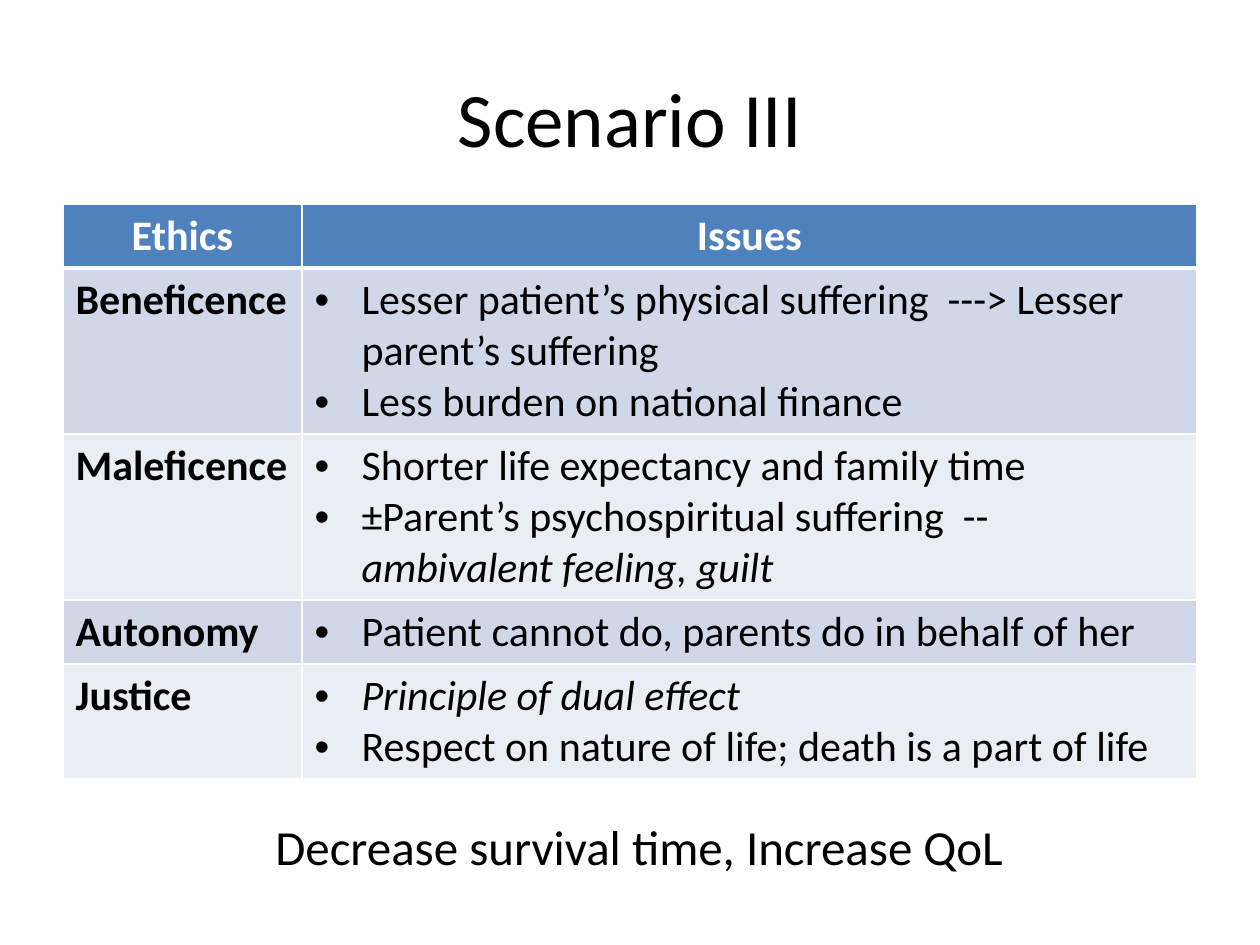
import pptx
import pptx.util
import pptx.dml.color
import pptx.enum.text
import pptx.oxml
import pptx.oxml.ns

EMU_PER_PX = 914400 // 126
FONT = "Calibri"
COLORS = {
    "text": "000000",
    "white": "FFFFFF",
    "header": "4F81BD",
    "band_dark": "D0D8E8",
    "band_light": "E9EDF4",
}
ALIGN = pptx.enum.text.PP_ALIGN
ANCHOR = pptx.enum.text.MSO_ANCHOR

BULLET_INDENT = 47
COLUMN_WIDTHS = [239, 895]
HEADINGS = ["Ethics", "Issues"]
# Each row: height, principle, issues; an issue is a list of (text, italic) runs
PRINCIPLES = [
    (166, "Beneficence", [
        [("Lesser patient’s physical suffering  ---> Lesser parent’s suffering", False)],
        [("Less burden on national finance", False)],
    ]),
    (166, "Maleficence", [
        [("Shorter life expectancy and family time", False)],
        [("±Parent’s psychospiritual suffering  -- ", False),
         ("ambivalent feeling, guilt", True)],
    ]),
    (64, "Autonomy", [
        [("Patient cannot do, parents do in behalf of her", False)],
    ]),
    (115, "Justice", [
        [("Principle of dual effect", True)],
        [("Respect on nature of life; death is a part of life", False)],
    ]),
]
HEADER_HEIGHT = 64


def px(value):
    return pptx.util.Emu(value * EMU_PER_PX)


def rgb(name):
    return pptx.dml.color.RGBColor.from_string(COLORS[name])


def add_run(paragraph, text, size, color="text", bold=False, italic=False):
    run = paragraph.add_run()
    run.text = text
    font = run.font
    font.name, font.size = FONT, pptx.util.Pt(size)
    font.bold, font.italic = bold, italic
    font.color.rgb = rgb(color)


def add_text(slide, box, text, size, align, anchor):
    frame = slide.shapes.add_textbox(*map(px, box)).text_frame
    frame.word_wrap = True
    frame.vertical_anchor = anchor
    paragraph = frame.paragraphs[0]
    paragraph.alignment = align
    add_run(paragraph, text, size)


def add_bullet(paragraph):
    properties = paragraph._p.get_or_add_pPr()
    indent = px(BULLET_INDENT)
    properties.set("marL", str(indent))
    properties.set("indent", str(-indent))
    ns = pptx.oxml.ns.nsdecls("a")
    for xml in (f'<a:buFont {ns} typeface="Arial"/>', f'<a:buChar {ns} char="•"/>'):
        properties.append(pptx.oxml.parse_xml(xml))


def style_cell(cell, fill, top=1, bottom=1):
    cell.fill.solid()
    cell.fill.fore_color.rgb = rgb(fill)
    # Borders come before the fill in the cell properties
    properties = cell._tc.get_or_add_tcPr()
    widths = {"lnL": 1, "lnR": 1, "lnT": top, "lnB": bottom}
    for position, (side, width) in enumerate(widths.items()):
        properties.insert(position, pptx.oxml.parse_xml(
            f'<a:{side} {pptx.oxml.ns.nsdecls("a")} w="{pptx.util.Pt(width)}">'
            f'<a:solidFill><a:srgbClr val="{COLORS["white"]}"/></a:solidFill></a:{side}>'))


def fill_issues(cell, issues):
    frame = cell.text_frame
    for index, issue in enumerate(issues):
        paragraph = frame.add_paragraph() if index else frame.paragraphs[0]
        add_bullet(paragraph)
        for text, italic in issue:
            add_run(paragraph, text, 24, italic=italic)


def add_ethics_table(slide, left, top):
    heights = [HEADER_HEIGHT] + [height for height, _, _ in PRINCIPLES]
    box = (left, top, sum(COLUMN_WIDTHS), sum(heights))
    table = slide.shapes.add_table(
        len(heights), len(COLUMN_WIDTHS), *map(px, box)).table
    for column, width in zip(table.columns, COLUMN_WIDTHS):
        column.width = px(width)
    for row, height in zip(table.rows, heights):
        row.height = px(height)

    # Header row
    for column, heading in enumerate(HEADINGS):
        cell = table.cell(0, column)
        style_cell(cell, "header", bottom=3)
        paragraph = cell.text_frame.paragraphs[0]
        paragraph.alignment = ALIGN.CENTER
        add_run(paragraph, heading, 24, "white", bold=True)

    # One banded row for each principle
    for row, (_, principle, issues) in enumerate(PRINCIPLES, start=1):
        principle_cell, issues_cell = table.cell(row, 0), table.cell(row, 1)
        for cell in (principle_cell, issues_cell):
            style_cell(cell, "band_dark" if row % 2 else "band_light",
                       top=3 if row == 1 else 1)
        add_run(principle_cell.text_frame.paragraphs[0], principle, 24, bold=True)
        fill_issues(issues_cell, issues)


def main():
    presentation = pptx.Presentation()
    presentation.slide_width = pptx.util.Inches(10)
    presentation.slide_height = pptx.util.Inches(7.5)
    slide = presentation.slides.add_slide(presentation.slide_layouts[6])

    # Title, table and conclusion
    add_text(slide, (63, 38, 1134, 157), "Scenario III", 44, ALIGN.CENTER, ANCHOR.MIDDLE)
    add_ethics_table(slide, 63, 204)
    add_text(slide, (263, 810, 804, 72), "Decrease survival time, Increase QoL", 28,
             ALIGN.LEFT, ANCHOR.TOP)

    presentation.save("out.pptx")


if __name__ == "__main__":
    main()
